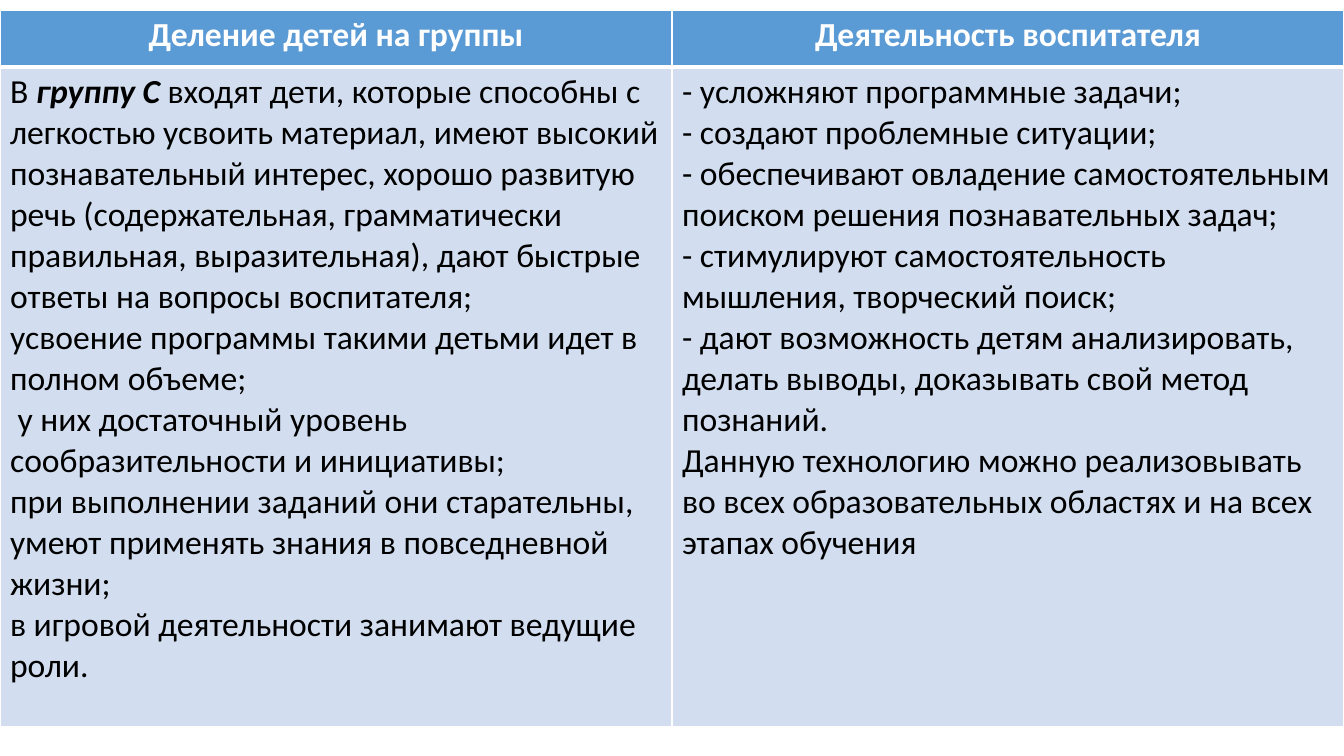
from lxml import etree
from pptx import Presentation
from pptx.dml.color import RGBColor
from pptx.enum.text import MSO_ANCHOR, PP_ALIGN
from pptx.oxml.ns import qn
from pptx.util import Emu, Pt

LEFT, CENTER = PP_ALIGN.LEFT, PP_ALIGN.CENTER
TOP = MSO_ANCHOR.TOP
WHITE = RGBColor(0xFF, 0xFF, 0xFF)
BLACK = RGBColor(0, 0, 0)
HEADER_BLUE = RGBColor(0x5B, 0x9B, 0xD5)
BODY_BLUE = RGBColor(0xD2, 0xDE, 0xEF)
FONT, TEXT_SIZE = "Calibri", Pt(24)

# Content: a paragraph is a tuple of text parts
GROUP_NAME = "группу С"
HEADERS = ["Деление детей на группы", "Деятельность воспитателя"]
CHILDREN = [
    ("В ", GROUP_NAME, " входят дети, которые способны с легкостью усвоить материал, "
     "имеют высокий познавательный интерес, хорошо развитую речь (содержательная, "
     "грамматически правильная, выразительная), дают быстрые ответы на вопросы воспитателя;"),
    ("усвоение программы такими детьми идет в полном объеме;",),
    (" у них достаточный уровень сообразительности и инициативы;",),
    ("при выполнении заданий они старательны, умеют применять знания в повседневной жизни;",),
    ("в игровой деятельности занимают ведущие роли.",),
]
TEACHER = [
    ("- усложняют программные задачи;",),
    ("- создают проблемные ситуации;",),
    ("- обеспечивают овладение самостоятельным поиском решения познавательных задач;",),
    ("- стимулируют самостоятельность мышления, творческий поиск;",),
    ("- дают возможность детям анализировать, делать выводы, доказывать свой метод познаний.",),
    ("Данную технологию можно реализовывать во всех образовательных областях "
     "и на всех этапах обучения",),
]
ROWS = [[[(header,)] for header in HEADERS], [CHILDREN, TEACHER]]

# Layout in px
SLIDE_W, SLIDE_H = 1344, 756
TABLE_TOP = 10
ROW_HEIGHTS = [57, 660]
THIN, THICK = Pt(1), Pt(3)


def px(length):
    return Emu(round(length * 914400 / 100.8))


def set_borders(cell, widths):
    """Draw white borders; widths go left, right, top, bottom."""
    properties = cell._tc.get_or_add_tcPr()
    for index, (side, width) in enumerate(zip("LRTB", widths)):
        line = etree.Element(qn(f"a:ln{side}"), w=str(int(width)))
        fill = etree.SubElement(line, qn("a:solidFill"))
        etree.SubElement(fill, qn("a:srgbClr"), val=str(WHITE))
        properties.insert(index, line)


def write_paragraphs(cell, paragraphs, color, bold, align):
    frame = cell.text_frame
    for index, parts in enumerate(paragraphs):
        paragraph = frame.paragraphs[0] if index == 0 else frame.add_paragraph()
        paragraph.alignment = align
        for part in parts:
            run = paragraph.add_run()
            run.text = part
            run.font.name, run.font.size = FONT, TEXT_SIZE
            run.font.color.rgb = color
            run.font.bold = bold or part == GROUP_NAME
            run.font.italic = part == GROUP_NAME


presentation = Presentation()
presentation.slide_width, presentation.slide_height = px(SLIDE_W), px(SLIDE_H)
slide = presentation.slides.add_slide(presentation.slide_layouts[6])

# Table with equal columns
groups = slide.shapes.add_table(
    len(ROWS), len(HEADERS), 0, px(TABLE_TOP), px(SLIDE_W), px(sum(ROW_HEIGHTS))
).table
for column in groups.columns:
    column.width = px(SLIDE_W / len(HEADERS))

# Header row, then body row
for r, (height, row) in enumerate(zip(ROW_HEIGHTS, ROWS)):
    groups.rows[r].height = px(height)
    is_header = r == 0
    for c, paragraphs in enumerate(row):
        cell = groups.cell(r, c)
        cell.vertical_anchor = TOP
        cell.fill.solid()
        cell.fill.fore_color.rgb = HEADER_BLUE if is_header else BODY_BLUE
        top, bottom = (THIN, THICK) if is_header else (THICK, THIN)
        set_borders(cell, (THIN, THIN, top, bottom))
        write_paragraphs(cell, paragraphs, WHITE if is_header else BLACK,
                         is_header, CENTER if is_header else LEFT)

presentation.save("out.pptx")
